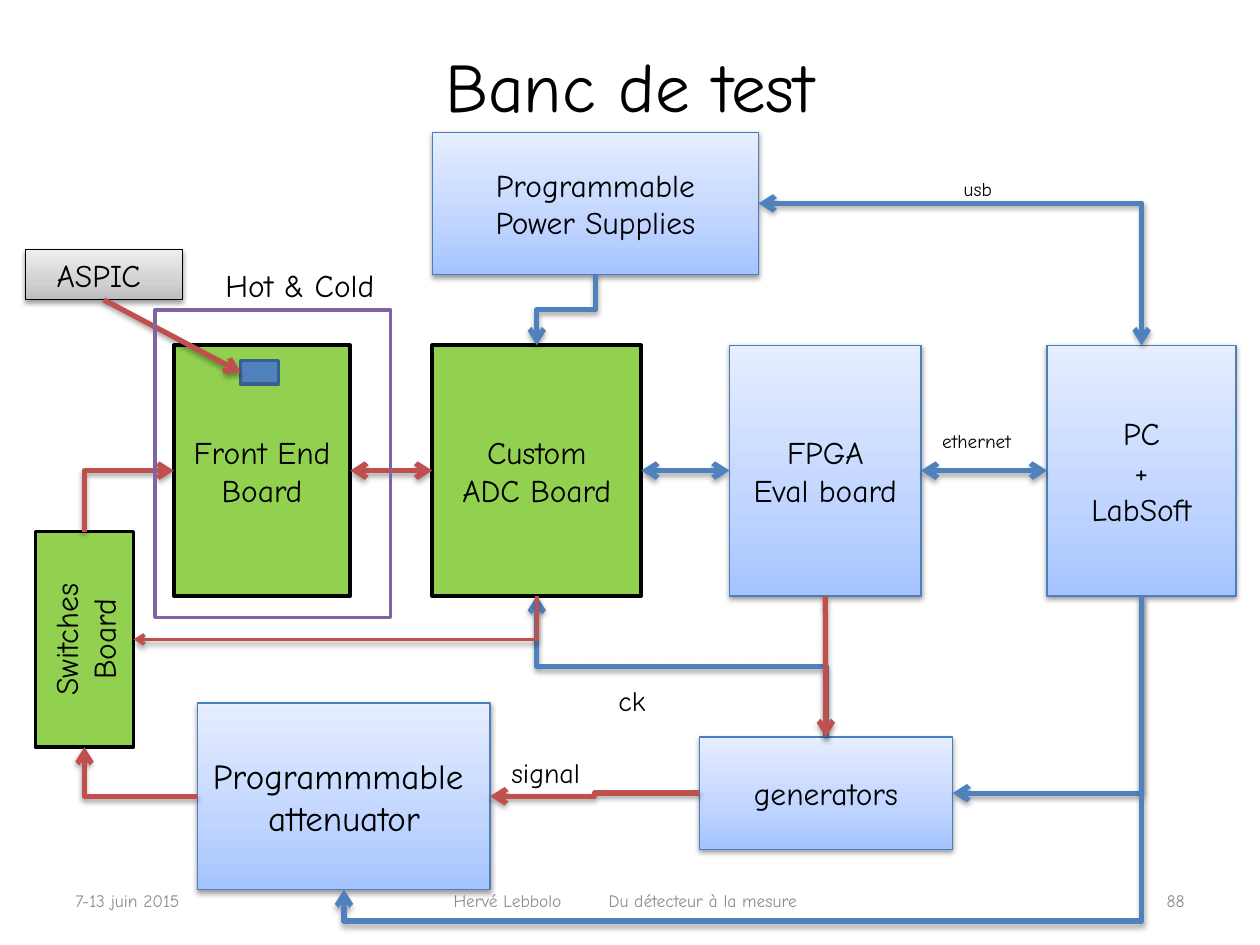
from copy import deepcopy
from lxml.etree import SubElement
from pptx import Presentation
from pptx.dml.color import RGBColor
from pptx.enum.shapes import MSO_CONNECTOR, MSO_SHAPE
from pptx.enum.text import MSO_ANCHOR, PP_ALIGN
from pptx.oxml.ns import qn
from pptx.util import Inches, Pt

BLACK = RGBColor(0, 0, 0)
GRAY = RGBColor(0x8C, 0x8C, 0x8C)
GREEN = RGBColor(0x92, 0xD0, 0x50)
BLUE = RGBColor(0x4F, 0x81, 0xBD)
NAVY = RGBColor(0x3A, 0x5F, 0x8C)
EDGE = RGBColor(0x4B, 0x7E, 0xBC)
RED = RGBColor(0xC0, 0x50, 0x4D)
PURPLE = RGBColor(0x80, 0x64, 0xA2)
SKY = [RGBColor(0xA4, 0xC4, 0xFF), RGBColor(0xBF, 0xD4, 0xFF), RGBColor(0xE6, 0xEE, 0xFF)]
SILVER = [RGBColor(0xBD, 0xBD, 0xBD), RGBColor(0xD1, 0xD1, 0xD1), RGBColor(0xEE, 0xEE, 0xEE)]

TOP, LEFT, BOTTOM, RIGHT = range(4)
TURN = {TOP: 270, LEFT: 180, BOTTOM: 90, RIGHT: 0}
ASIDE = {TOP: (1, 0), LEFT: (0, -1), BOTTOM: (-1, 0), RIGHT: (0, 1)}


def side(box, where):
    mid_x, mid_y = box.left + box.width // 2, box.top + box.height // 2
    return {
        TOP: (mid_x, box.top),
        LEFT: (box.left, mid_y),
        BOTTOM: (mid_x, box.top + box.height),
        RIGHT: (box.left + box.width, mid_y),
    }[where]


class Board:
    face = "Comic Neue"

    def __init__(self, slide):
        self.slide = slide

    def letter(self, shape, text, size, color=BLACK, align=PP_ALIGN.LEFT,
               anchor=MSO_ANCHOR.MIDDLE, wrap=True):
        frame = shape.text_frame
        frame.word_wrap = wrap
        frame.vertical_anchor = anchor
        frame.text = text
        form = {"name": self.face, "size": Pt(size)}
        for para in frame.paragraphs:
            para.alignment = align
            for run in para.runs:
                for key, value in form.items():
                    setattr(run.font, key, value)
                run.font.color.rgb = color

    def label(self, text, place, size, **style):
        box = self.slide.shapes.add_textbox(*map(Inches, place))
        self.letter(box, text, size, **style)
        return box

    def shade(self, props, alpha, dist):
        glow = props.find(qn("a:effectLst"))
        if glow is None:
            glow = SubElement(props, qn("a:effectLst"))
        drop = SubElement(glow, qn("a:outerShdw"), blurRad=str(Pt(3.1)),
                          dist=str(Pt(dist)), dir="5400000", rotWithShape="0")
        tint = SubElement(drop, qn("a:srgbClr"), val="000000")
        SubElement(tint, qn("a:alpha"), val=str(alpha * 1000))

    def blend(self, shape, colors):
        shape.fill.gradient()
        shape.fill.gradient_angle = 90
        stops = shape.element.spPr.find(".//" + qn("a:gsLst"))
        stops.append(deepcopy(stops[-1]))
        for stop, color, spot in zip(shape.fill.gradient_stops, colors, (0, 0.35, 1)):
            stop.color.rgb = color
            stop.position = spot
        self.shade(shape.element.spPr, 38, 1.6)

    def box(self, text, place, fill=SKY, edge=EDGE, size=18, anchor=MSO_ANCHOR.MIDDLE):
        shape = self.slide.shapes.add_shape(MSO_SHAPE.RECTANGLE, *map(Inches, place))
        shape.shadow.inherit = False
        shape.line.color.rgb = edge
        shape.line.width = Pt(0.75 if isinstance(fill, list) else 2)
        if fill is None:
            shape.fill.background()
        elif isinstance(fill, list):
            self.blend(shape, fill)
        else:
            shape.fill.solid()
            shape.fill.fore_color.rgb = fill
        if text:
            self.letter(shape, text, size, align=PP_ALIGN.CENTER, anchor=anchor)
        return shape

    def finish(self, link, color, width, both):
        link.line.color.rgb = color
        link.line.width = Pt(width)
        props = link.element.spPr
        stroke = props.find(qn("a:ln"))
        for end in ("headEnd", "tailEnd") if both else ("tailEnd",):
            SubElement(stroke, qn("a:" + end), type="arrow")
        self.shade(props, 35, 1.8)

    def line(self, start, out, stop, into, color, both=False):
        ends = side(start, out) + side(stop, into)
        link = self.slide.shapes.add_connector(MSO_CONNECTOR.STRAIGHT, *ends)
        link.begin_connect(start, out)
        link.end_connect(stop, into)
        self.finish(link, color, 3, both)

    def bend(self, start, out, stop, into, color, width=3, both=False):
        (x1, y1), (x2, y2) = side(start, out), side(stop, into)
        dx, dy = x2 - x1, y2 - y1
        wide, high = abs(dx), abs(dy)
        if out in (TOP, BOTTOM):
            wide, high = high, wide
        left, top = (x1 + x2 - wide) // 2, (y1 + y2 - high) // 2
        link = self.slide.shapes.add_connector(
            MSO_CONNECTOR.ELBOW, left, top, left + wide, top + high)
        props = link.element.spPr
        props.xfrm.set("rot", str(TURN[out] * 60000))
        if dx * ASIDE[out][0] + dy * ASIDE[out][1] < 0:
            props.xfrm.set("flipV", "1")
        shape = props.find(qn("a:prstGeom"))
        if (out - into) % 2:
            shape.set("prst", "bentConnector2")
        elif out == into:
            reach = round(100000 * (wide + Inches(0.25)) / wide)
            SubElement(shape.find(qn("a:avLst")), qn("a:gd"), name="adj1", fmla=f"val {reach}")
        self.finish(link, color, width, both)


def main():
    deck = Presentation()
    deck.slide_width, deck.slide_height = Inches(10), Inches(7.5)
    board = Board(deck.slides.add_slide(deck.slide_layouts[6]))

    board.label("Banc de test", (0.5, 0.3, 9, 0.75), 39.6, align=PP_ALIGN.CENTER)
    board.label("7-13 juin 2015", (0.5, 6.95, 1.51, 0.4), 10, color=GRAY)
    foot = board.label("Hervé Lebbolo\tDu détecteur à la mesure",
                       (2.32, 6.95, 5.28, 0.4), 10, color=GRAY)
    foot.text_frame.margin_left = Inches(1.28)
    tabs = SubElement(foot.text_frame.paragraphs[0]._p.get_or_add_pPr(), qn("a:tabLst"))
    SubElement(tabs, qn("a:tab"), pos=str(Inches(1.23)), algn="l")
    board.label("88", (8.31, 6.95, 1.19, 0.4), 10, color=GRAY, align=PP_ALIGN.RIGHT)

    row, tall = 2.74, 1.99
    front = board.box("Front End\nBoard", (1.38, row, 1.4, tall), GREEN, BLACK)
    custom = board.box("Custom\nADC Board", (3.43, row, 1.66, tall), GREEN, BLACK)
    tester = board.box("FPGA\nEval board", (5.79, row, 1.52, tall))
    desk = board.box("PC\n+\nLabSoft", (8.31, row, 1.5, tall))
    source = board.box("generators", (5.55, 5.85, 2.01, 0.89))
    power = board.box("Programmable\nPower Supplies", (3.43, 1.05, 2.59, 1.13))
    chip = board.box("", (1.91, 2.86, 0.3, 0.19), BLUE, NAVY)
    aspic = board.box("ASPIC ", (0.2, 1.98, 1.25, 0.4), SILVER, BLACK, anchor=MSO_ANCHOR.TOP)
    switch = board.box("Switches\nBoard", (0.28, 4.22, 0.78, 1.71), GREEN, BLACK)
    switch.text_frame._txBody.find(qn("a:bodyPr")).set("vert", "vert270")
    damper = board.box("Programmmable \nattenuator", (1.57, 5.58, 2.32, 1.48), size=20)

    board.line(front, RIGHT, custom, LEFT, RED, both=True)
    board.line(custom, RIGHT, tester, LEFT, BLUE, both=True)
    board.line(tester, RIGHT, desk, LEFT, BLUE, both=True)
    board.line(aspic, BOTTOM, chip, LEFT, RED)
    board.bend(desk, BOTTOM, source, RIGHT, BLUE)
    board.bend(source, TOP, custom, BOTTOM, BLUE)
    board.bend(desk, TOP, power, RIGHT, BLUE, both=True)
    board.bend(power, BOTTOM, custom, TOP, BLUE)
    board.bend(source, LEFT, damper, RIGHT, RED)
    board.bend(damper, LEFT, switch, BOTTOM, RED)
    board.bend(desk, BOTTOM, damper, BOTTOM, BLUE)
    board.bend(switch, TOP, front, LEFT, RED)
    board.line(tester, BOTTOM, source, TOP, RED)
    board.bend(custom, BOTTOM, switch, RIGHT, RED, width=2)

    board.box("", (1.23, 2.46, 1.87, 2.44), None, PURPLE)
    for text, place, size in (
        ("signal", (3.96, 5.95, 0.79, 0.37), 16),
        ("ck", (4.81, 5.38, 0.44, 0.37), 16),
        ("ethernet", (7.38, 3.36, 0.84, 0.29), 11),
        ("usb", (7.55, 1.36, 0.45, 0.29), 11),
        ("Hot & Cold", (1.69, 2.06, 1.47, 0.4), 18),
    ):
        board.label(text, place, size, anchor=MSO_ANCHOR.TOP, wrap=False)

    deck.save("out.pptx")


if __name__ == "__main__":
    main()
